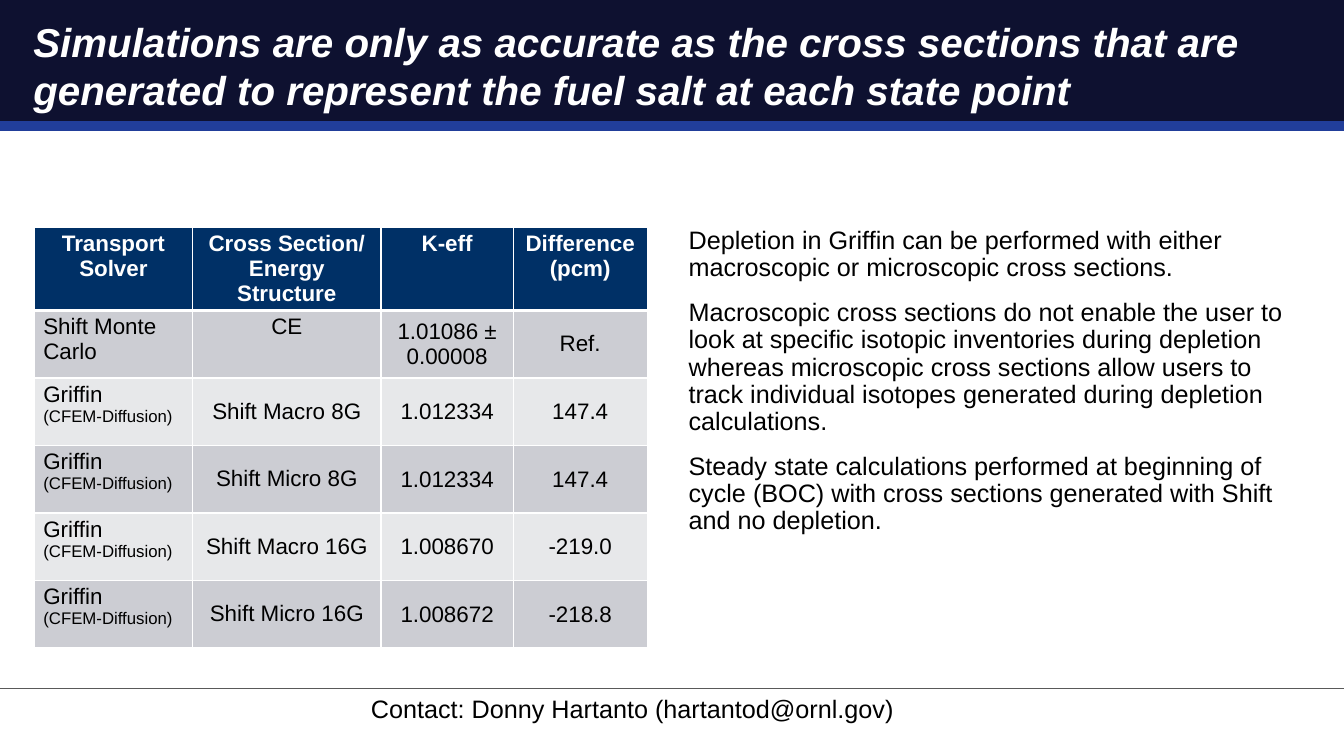
from lxml.etree import SubElement
from pptx import Presentation
from pptx.dml.color import RGBColor
from pptx.enum.shapes import MSO_CONNECTOR, MSO_SHAPE
from pptx.enum.text import MSO_ANCHOR, MSO_AUTO_SIZE, PP_ALIGN
from pptx.oxml.ns import qn
from pptx.util import Inches, Pt

NAVY = RGBColor(0x0E, 0x11, 0x30)
BLUE = RGBColor(0x21, 0x3E, 0x9A)
GRAY = RGBColor(0x59, 0x59, 0x59)
HEADER = RGBColor(0x00, 0x30, 0x66)
ROW_DARK = RGBColor(0xCC, 0xCD, 0xD3)
ROW_LIGHT = RGBColor(0xE7, 0xE8, 0xEA)
WHITE = RGBColor(0xFF, 0xFF, 0xFF)
BLACK = RGBColor(0x00, 0x00, 0x00)

TITLE = ("Simulations are only as accurate as the cross sections that are "
         "generated to represent the fuel salt at each state point")
FINDINGS = [
    "Depletion in Griffin can be performed with either macroscopic or "
    "microscopic cross sections.",
    "Macroscopic cross sections do not enable the user to look at specific "
    "isotopic inventories during depletion whereas microscopic cross sections "
    "allow users to track individual isotopes generated during depletion "
    "calculations.",
    "Steady state calculations performed at beginning of cycle (BOC) with "
    "cross sections generated with Shift and no depletion.",
]
CONTACT = "Contact: Donny Hartanto (hartantod@ornl.gov)"
GRIFFIN = "Griffin\n(CFEM-Diffusion)"
RESULTS = [
    ("Transport Solver", "Cross Section/ Energy Structure", "K-eff", "Difference (pcm)"),
    ("Shift Monte Carlo", "CE", "1.01086 ± 0.00008", "Ref."),
    (GRIFFIN, "Shift Macro 8G", "1.012334", "147.4"),
    (GRIFFIN, "Shift Micro 8G", "1.012334", "147.4"),
    (GRIFFIN, "Shift Macro 16G", "1.008670", "-219.0"),
    (GRIFFIN, "Shift Micro 16G", "1.008672", "-218.8"),
]
COLUMN_WIDTHS = (1.57, 1.87, 1.31, 1.33)
ROW_HEIGHT = 0.67


def set_all(target, values):
    for name, value in values.items():
        setattr(target, name, value)


def style_font(font, size, color, bold=False, italic=False):
    set_all(font, {"name": "Arial", "size": Pt(size), "bold": bold, "italic": italic})
    font.color.rgb = color


def place(shape, box):
    set_all(shape, dict(zip(("left", "top", "width", "height"), map(Inches, box))))


def set_margins(target, left, top, right, bottom):
    set_all(target, {"margin_left": Inches(left), "margin_top": Inches(top),
                     "margin_right": Inches(right), "margin_bottom": Inches(bottom)})


def add_rule(slide, left, y, width, color, weight):
    rule = slide.shapes.add_connector(
        MSO_CONNECTOR.STRAIGHT, *map(Inches, (left, y, left + width, y)))
    rule.line.color.rgb = color
    rule.line.width = Pt(weight)
    SubElement(rule.element.spPr, qn("a:effectLst"))
    return rule


def add_backdrop(slide, box):
    """Dark band with a blue lower edge, behind the title."""
    left, top, width, height = box
    band = slide.shapes.add_shape(MSO_SHAPE.RECTANGLE, *map(Inches, box))
    band.shadow.inherit = False
    band.fill.solid()
    band.fill.fore_color.rgb = NAVY
    band.line.fill.background()
    edge = add_rule(slide, left, top + height, width, BLUE, 6.75)
    for part in (band, edge):
        slide.shapes.title.element.addprevious(part.element)


def fill_title(slide, box):
    title = slide.shapes.title
    place(title, box)
    frame = title.text_frame
    frame.text = TITLE
    set_all(frame, {"word_wrap": True, "auto_size": MSO_AUTO_SIZE.NONE,
                    "vertical_anchor": MSO_ANCHOR.TOP})
    set_margins(frame, 0, 0, 0, 0)
    frame.paragraphs[0].alignment = PP_ALIGN.LEFT
    style_font(frame.paragraphs[0].font, 28.8, WHITE, bold=True, italic=True)


def fill_findings(slide, box):
    body = slide.placeholders[1]
    place(body, box)
    frame = body.text_frame
    frame.text = "\n".join(FINDINGS)
    set_all(frame, {"word_wrap": True, "auto_size": MSO_AUTO_SIZE.NONE})
    set_margins(frame, 0, 0, 0, 0)
    for number, paragraph in enumerate(frame.paragraphs):
        properties = paragraph._p.get_or_add_pPr()
        properties.set("marL", "0")
        properties.set("indent", "0")
        SubElement(properties, qn("a:buNone"))
        set_all(paragraph, {"line_spacing": 0.9, "space_after": Pt(0.6),
                            "space_before": Pt(12 if number else 0)})
        style_font(paragraph.font, 18, BLACK)


def set_borders(cell, weights):
    properties = cell._tc.get_or_add_tcPr()
    for side, weight in weights.items():
        line = SubElement(properties, qn(f"a:ln{side}"), w=str(Pt(weight)))
        color = SubElement(SubElement(line, qn("a:solidFill")), qn("a:srgbClr"))
        color.set("val", str(WHITE))


def fill_cell(cell, text, row, column):
    header = row == 0
    set_borders(cell, {"L": 1, "R": 1, "T": 3 if row == 1 else 1, "B": 3 if header else 1})
    cell.fill.solid()
    cell.fill.fore_color.rgb = HEADER if header else ROW_DARK if row % 2 else ROW_LIGHT
    if row > 1 and column > 1:
        set_margins(cell, 0.01, 0.01, 0.01, 0)
    else:
        set_margins(cell, 0.09, 0.04, 0.09, 0.04)
    at_top = header or column == 0 or (row, column) == (1, 1)
    cell.vertical_anchor = MSO_ANCHOR.TOP if at_top else MSO_ANCHOR.MIDDLE
    cell.text = text
    for number, paragraph in enumerate(cell.text_frame.paragraphs):
        centered = header or column > 0
        paragraph.alignment = PP_ALIGN.CENTER if centered else PP_ALIGN.LEFT
        style_font(paragraph.font, 12 if number else 16, WHITE if header else BLACK, bold=header)


def add_results(slide, left, top):
    """Comparison of solvers and cross section structures."""
    table = slide.shapes.add_table(
        len(RESULTS), len(COLUMN_WIDTHS), Inches(left), Inches(top),
        Inches(sum(COLUMN_WIDTHS)), Inches(ROW_HEIGHT * len(RESULTS))).table
    for column, width in zip(table.columns, COLUMN_WIDTHS):
        column.width = Inches(width)
    for row, texts in enumerate(RESULTS):
        table.rows[row].height = Inches(ROW_HEIGHT)
        for column, text in enumerate(texts):
            fill_cell(table.cell(row, column), text, row, column)


def add_footer(slide, box):
    """Thin rule across the page with the contact below it."""
    left, top, width, height = box
    add_rule(slide, left, top, width, GRAY, 1)
    contact = slide.shapes.add_textbox(
        Inches(left + 3.61), Inches(top), Inches(5.44), Inches(height))
    frame = contact.text_frame
    set_all(frame, {"word_wrap": False, "auto_size": MSO_AUTO_SIZE.SHAPE_TO_FIT_TEXT})
    frame.text = CONTACT
    style_font(frame.paragraphs[0].font, 18, BLACK)


def main():
    deck = Presentation()
    set_all(deck, {"slide_width": Inches(13.33), "slide_height": Inches(7.5)})
    slide = deck.slides.add_slide(deck.slide_layouts[1])
    add_backdrop(slide, (-0.03, 0, 13.4, 1.25))
    fill_title(slide, (0.33, 0.17, 12.78, 0.75))
    fill_findings(slide, (6.83, 2.26, 6.08, 4.26))
    add_results(slide, 0.34, 2.26)
    add_footer(slide, (-0.03, 6.83, 13.4, 0.4))
    deck.save("out.pptx")


if __name__ == "__main__":
    main()
